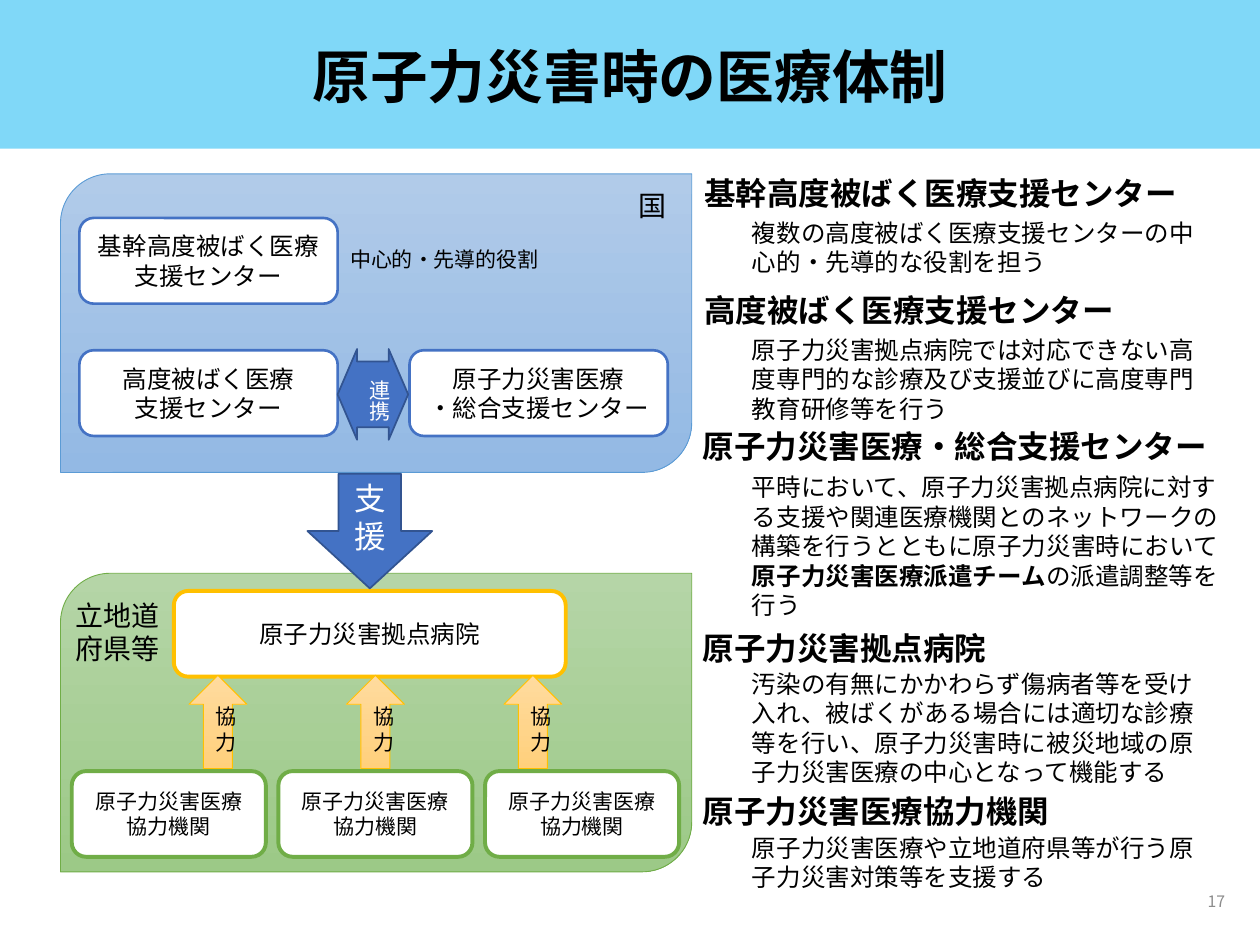
from pptx import Presentation
from pptx.dml.color import RGBColor
from pptx.enum.shapes import MSO_SHAPE
from pptx.enum.text import MSO_ANCHOR, PP_ALIGN
from pptx.oxml.ns import qn
from pptx.util import Inches, Pt
from lxml.etree import SubElement

FONT = "Noto Sans CJK JP"
COLORS = {
    "black": "000000", "white": "FFFFFF", "gray": "8C8C8C", "band": "80D8F8",
    "blue": "4472C4", "dark_blue": "325491", "light_blue": "5B9BD5",
    "green": "70AD47", "gold": "FFC000",
    "blue_top": "B1CBE9", "blue_bottom": "93B9E4",
    "green_top": "B5D5A7", "green_bottom": "9CC987",
    "gold_top": "FFDB9E", "gold_bottom": "FFD07C",
}

presentation = Presentation()
presentation.slide_width = Inches(10)
presentation.slide_height = Inches(7.5)
slide = presentation.slides.add_slide(presentation.slide_layouts[6])


def write_text(text, box=None, shape=None, size=14, color="black", bold=False,
               align=PP_ALIGN.LEFT, anchor=MSO_ANCHOR.TOP, wrap=True, spacing=None):
    if shape is None:
        shape = slide.shapes.add_textbox(*map(Inches, box))
    frame = shape.text_frame
    frame.word_wrap = wrap
    frame.vertical_anchor = anchor
    for number, line in enumerate(text.split("\n")):
        paragraph = frame.add_paragraph() if number else frame.paragraphs[0]
        paragraph.alignment = align
        paragraph.line_spacing = spacing
        for index, part in enumerate(line.split("**")):
            run = paragraph.add_run()
            run.text = part
            run.font.size = Pt(size)
            run.font.name = FONT
            run.font.bold = bold or index % 2 == 1
            run.font.color.rgb = RGBColor.from_string(COLORS[color])
            SubElement(run.font._element, qn("a:ea"), typeface=FONT)
    return shape


def add_block(kind, box, fill, line=None, width=1, text=None, size=14, color="black"):
    shape = slide.shapes.add_shape(kind, *map(Inches, box))
    shape.shadow.inherit = False
    if isinstance(fill, tuple):
        shape.fill.gradient()
        shape.fill.gradient_angle = 270
        for stop, name in zip(shape.fill.gradient_stops, fill):
            stop.color.rgb = RGBColor.from_string(COLORS[name])
    else:
        shape.fill.solid()
        shape.fill.fore_color.rgb = RGBColor.from_string(COLORS[fill])
    if line:
        shape.line.color.rgb = RGBColor.from_string(COLORS[line])
        shape.line.width = Pt(width)
    else:
        shape.line.fill.background()
    if text:
        write_text(text, shape=shape, size=size, color=color,
                   align=PP_ALIGN.CENTER, anchor=MSO_ANCHOR.MIDDLE)
    return shape


add_block(MSO_SHAPE.RECTANGLE, (0, 0, 10, 1.18), "band")
write_text("原子力災害時の医療体制", (0.69, 0.21, 8.62, 0.85), size=33, bold=True,
           align=PP_ALIGN.CENTER, anchor=MSO_ANCHOR.MIDDLE, spacing=0.9)

sections = [
    ("基幹高度被ばく医療支援センター", (5.49, 1.33, 4.14, 0.4),
     "複数の高度被ばく医療支援センターの中心的・先導的な役割を担う", (5.87, 1.68, 3.86, 0.57)),
    ("高度被ばく医療支援センター", (5.49, 2.26, 3.48, 0.4),
     "原子力災害拠点病院では対応できない高度専門的な診療及び支援並びに高度専門教育研修等を行う",
     (5.87, 2.61, 3.86, 0.81)),
    ("原子力災害医療・総合支援センター", (5.48, 3.34, 4.24, 0.4),
     "平時において、原子力災害拠点病院に対する支援や関連医療機関とのネットワークの構築を行うとともに"
     "原子力災害時において**原子力災害医療派遣チーム**の派遣調整等を行う", (5.87, 3.7, 3.97, 1.28)),
    ("原子力災害拠点病院", (5.48, 4.94, 2.47, 0.4),
     "汚染の有無にかかわらず傷病者等を受け入れ、被ばくがある場合には適切な診療等を行い、"
     "原子力災害時に被災地域の原子力災害医療の中心となって機能する", (5.87, 5.26, 3.86, 1.04)),
    ("原子力災害医療協力機関", (5.48, 6.24, 2.98, 0.4),
     "原子力災害医療や立地道府県等が行う原子力災害対策等を支援する", (5.87, 6.56, 3.86, 0.57)),
]
for heading, heading_box, description, description_box in sections:
    write_text(heading, heading_box, size=18, bold=True, wrap=False)
    write_text(description, description_box)

write_text("17", (7.57, 6.95, 2.25, 0.4), size=9, color="gray",
           align=PP_ALIGN.RIGHT, anchor=MSO_ANCHOR.MIDDLE)

add_block(MSO_SHAPE.ROUND_2_DIAG_RECTANGLE, (0.48, 1.38, 5.01, 2.37),
          ("blue_top", "blue_bottom"), "light_blue", 0.5)
write_text("国", (4.97, 1.45, 0.43, 0.37), size=16, wrap=False)
centers = [
    (0.63, 1.73, "基幹高度被ばく医療支援センター"),
    (0.63, 2.78, "高度被ばく医療\n支援センター"),
    (3.25, 2.78, "原子力災害医療\n・総合支援センター"),
]
for left, top, name in centers:
    add_block(MSO_SHAPE.ROUNDED_RECTANGLE, (left, top, 2.05, 0.68), "white", "blue", 1.5, name)
write_text("中心的・先導的役割", (2.68, 1.91, 1.78, 0.3), size=12, wrap=False)

cooperation_arrow = add_block(MSO_SHAPE.LEFT_RIGHT_ARROW, (2.68, 2.77, 0.56, 0.72),
                              "blue", "dark_blue")
cooperation_arrow.adjustments[0] = 0.724
cooperation_arrow.adjustments[1] = 0.276
cooperation_label = write_text("連携", (2.76, 2.92, 0.4, 0.44), size=12, color="white", wrap=False)
cooperation_label.element.txBody.find(qn("a:bodyPr")).set("vert", "eaVert")

add_block(MSO_SHAPE.ROUND_2_DIAG_RECTANGLE, (0.48, 4.55, 5.01, 2.37),
          ("green_top", "green_bottom"), "green", 0.5)
write_text("立地道府県等", (0.5, 4.7, 1, 0.64), size=16)
add_block(MSO_SHAPE.ROUNDED_RECTANGLE, (1.38, 4.69, 3.11, 0.68), "white", "gold", 2.25,
          "原子力災害拠点病院")
add_block(MSO_SHAPE.DOWN_ARROW, (2.44, 3.76, 0.99, 0.91), "blue", "dark_blue", 1,
          "支援", 18, "white")

for column in range(3):
    add_block(MSO_SHAPE.ROUNDED_RECTANGLE, (0.57 + 1.64 * column, 6.12, 1.54, 0.68),
              "white", "green", 2.25, "原子力災害医療\n協力機関", 12)
    add_block(MSO_SHAPE.UP_ARROW, (1.5 + 1.25 * column, 5.36, 0.46, 0.74),
              ("gold_top", "gold_bottom"), "gold", 0.5, "協力", 12)

presentation.save("out.pptx")
